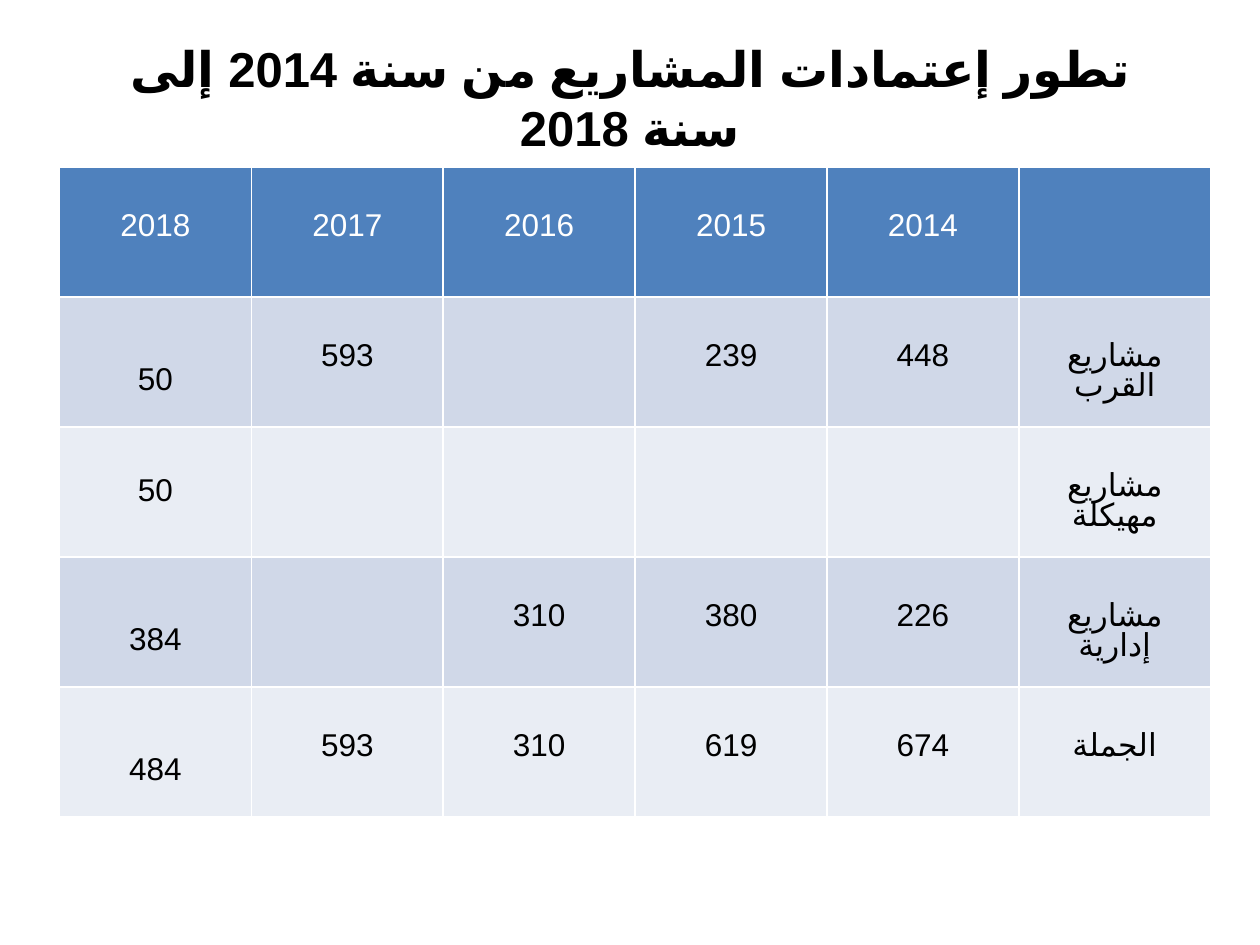
from lxml.etree import SubElement
from pptx import Presentation
from pptx.dml.color import RGBColor
from pptx.enum.text import MSO_ANCHOR, PP_ALIGN
from pptx.oxml.ns import qn
from pptx.util import Pt

FONT = "Calibri"
ARABIC_FONT = "Arial"
COLORS = {
    "text": "000000",
    "header_text": "FFFFFF",
    "header": "4F81BD",
    "odd_row": "D0D8E8",
    "even_row": "E9EDF4",
    "border": "FFFFFF",
}
TITLE = "تطور إعتمادات المشاريع من سنة 2014 إلى سنة 2018"
ROWS = [
    ["2018", "2017", "2016", "2015", "2014", ""],
    ["50", "593", "", "239", "448", "مشاريع القرب"],
    ["50", "", "", "", "", "مشاريع مهيكلة"],
    ["384", "", "310", "380", "226", "مشاريع إدارية"],
    ["484", "593", "310", "619", "674", "الجملة"],
]
STRUCTURAL_ROW = 2
CELL_MARGIN = 3.6
LOWERED_MARGIN = 26


def write_text(text_frame, text, size=18, color="text", bold=False,
               rtl=False, line_spacing=None):
    paragraph = text_frame.paragraphs[0]
    paragraph.alignment = PP_ALIGN.CENTER
    paragraph.line_spacing = line_spacing
    if rtl:
        paragraph._p.get_or_add_pPr().set("rtl", "1")
    run = paragraph.add_run()
    run.text = text
    run.font.name = FONT
    run.font.size = Pt(size)
    run.font.bold = bold
    run.font.color.rgb = RGBColor.from_string(COLORS[color])
    properties = run._r.get_or_add_rPr()
    properties.set("lang", "ar-TN")
    SubElement(properties, qn("a:cs"), typeface=ARABIC_FONT)


def set_borders(cell, width=1):
    properties = cell._tc.get_or_add_tcPr()
    for position, side in enumerate(("lnL", "lnR", "lnT", "lnB")):
        line = SubElement(properties, qn(f"a:{side}"), w=str(Pt(width)))
        fill = SubElement(line, qn("a:solidFill"))
        SubElement(fill, qn("a:srgbClr"), val=COLORS["border"])
        properties.insert(position, line)


def add_title(slide, left, top, width, height):
    text_box = slide.shapes.add_textbox(Pt(left), Pt(top), Pt(width), Pt(height))
    text_frame = text_box.text_frame
    text_frame.word_wrap = True
    text_frame.vertical_anchor = MSO_ANCHOR.MIDDLE
    write_text(text_frame, TITLE, size=28, bold=True)


def format_cell(cell, text, row, column):
    if row == 0:
        fill, color = "header", "header_text"
    else:
        fill, color = ("odd_row" if row % 2 else "even_row"), "text"
    cell.fill.solid()
    cell.fill.fore_color.rgb = RGBColor.from_string(COLORS[fill])
    set_borders(cell)

    in_latest_year = row > 0 and column == 0
    lowered = not (in_latest_year and row == STRUCTURAL_ROW)
    cell.margin_top = Pt(LOWERED_MARGIN if lowered else CELL_MARGIN)
    cell.vertical_anchor = MSO_ANCHOR.MIDDLE if in_latest_year else MSO_ANCHOR.TOP
    if text:
        write_text(cell.text_frame, text, color=color, rtl=True, line_spacing=0.85)


def add_budget_table(slide, left, top, width, height):
    row_count, column_count = len(ROWS), len(ROWS[0])
    table = slide.shapes.add_table(
        row_count, column_count, Pt(left), Pt(top), Pt(width), Pt(height)
    ).table
    for table_column in table.columns:
        table_column.width = Pt(width / column_count)
    for table_row in table.rows:
        table_row.height = Pt(height / row_count)
    for row, values in enumerate(ROWS):
        for column, text in enumerate(values):
            format_cell(table.cell(row, column), text, row, column)


def main():
    presentation = Presentation()
    presentation.slide_width = Pt(720)
    presentation.slide_height = Pt(540)
    slide = presentation.slides.add_slide(presentation.slide_layouts[6])
    add_title(slide, 36, 21.6, 648, 68.4)
    add_budget_table(slide, 34, 95.5, 658, 371.5)
    presentation.save("out.pptx")


if __name__ == "__main__":
    main()
